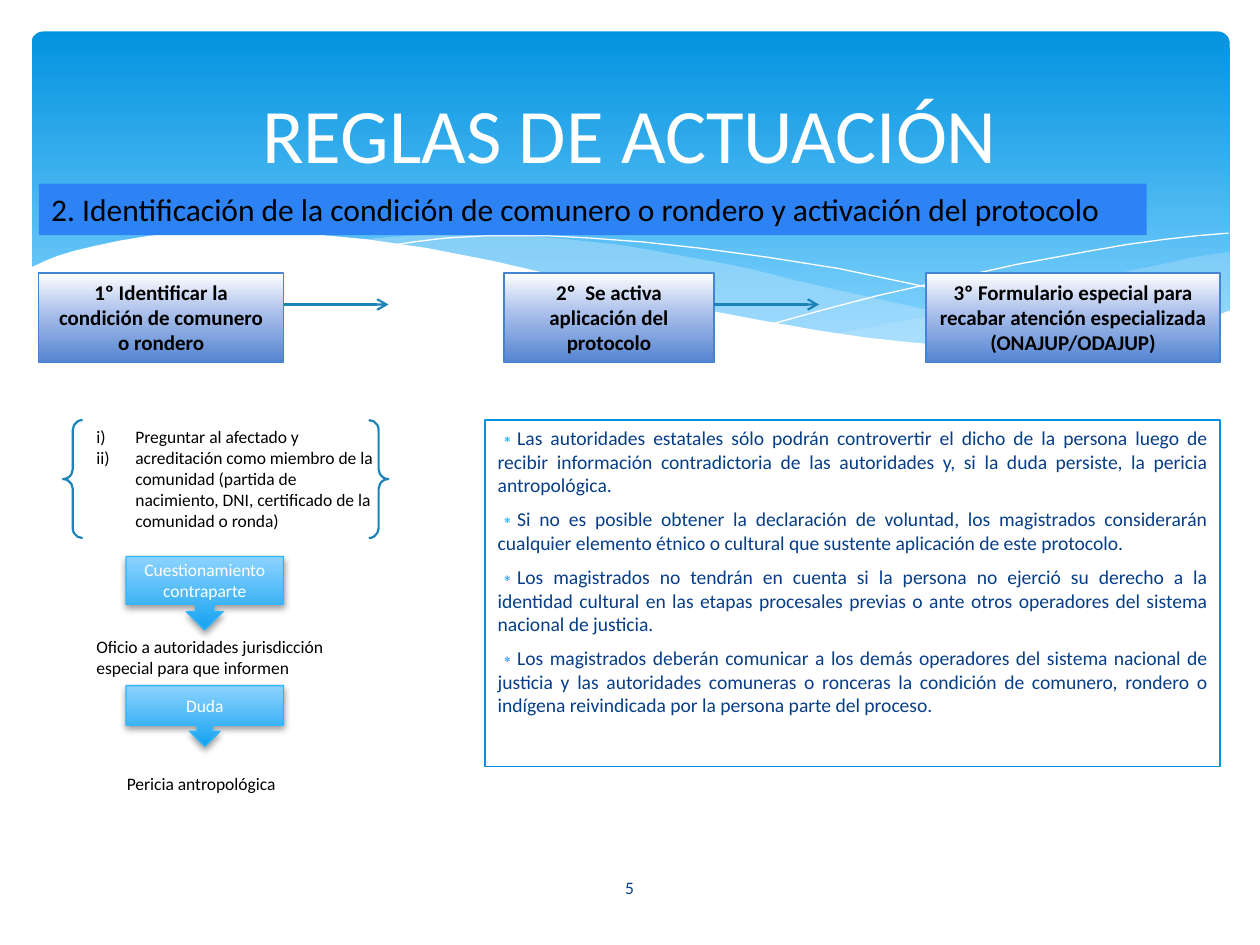
"""Build the slide on rules of action: three steps, a chain of doubts and the notes beside it."""
from lxml import etree
from pptx import Presentation
from pptx import util as u
from pptx.dml.color import RGBColor
from pptx.enum import shapes, text
from pptx.oxml import ns

CELL = u.Inches(1) // 12
FONT = "Calibri"
KIND = shapes.MSO_SHAPE
LEFT, CENTER, JUSTIFY = text.PP_ALIGN.LEFT, text.PP_ALIGN.CENTER, text.PP_ALIGN.JUSTIFY
TOP, MIDDLE = text.MSO_ANCHOR.TOP, text.MSO_ANCHOR.MIDDLE
NAVY, EDGE = "073E87", "1C83B9"


def paint(shape, stops=(), line=None, width=0.75, alpha=None):
    """Fill with (position, colour) stops, top to bottom, and outline a shape."""
    shape.shadow.inherit = False
    if len(stops) > 1:
        shape.fill.gradient()
        shape.fill.gradient_angle = 270
        ramp = shape._element.spPr.find(".//" + ns.qn("a:gsLst"))
        for stop in list(ramp):
            ramp.remove(stop)
        for position, color in stops:
            stop = etree.SubElement(ramp, ns.qn("a:gs"), pos=str(position * 1000))
            etree.SubElement(stop, ns.qn("a:srgbClr"), val=color)
    elif stops:
        shape.fill.solid()
        shape.fill.fore_color.rgb = RGBColor.from_string(stops[0][1])
        if alpha:
            tint = shape._element.spPr.find(".//" + ns.qn("a:srgbClr"))
            etree.SubElement(tint, ns.qn("a:alpha"), val=str(alpha * 1000))
    else:
        shape.fill.background()
    if line:
        shape.line.color.rgb = RGBColor.from_string(line)
        shape.line.width = u.Pt(width)
    else:
        shape.line.fill.background()


def write(shape, lines, size, color="000000", align=LEFT, anchor=TOP, bold=False, after=0):
    """Write one paragraph per line and return the paragraphs."""
    frame = shape.text_frame
    frame.text = "\n".join(lines)
    settings = {"word_wrap": True, "auto_size": text.MSO_AUTO_SIZE.NONE, "vertical_anchor": anchor}
    for name, value in settings.items():
        setattr(frame, name, value)
    layout = {"alignment": align, "space_before": u.Pt(0), "space_after": u.Pt(after)}
    style = {"name": FONT, "size": u.Pt(size), "bold": bold}
    for para in frame.paragraphs:
        for name, value in layout.items():
            setattr(para, name, value)
        for span in para.runs:
            span.font.color.rgb = RGBColor.from_string(color)
            for name, value in style.items():
                setattr(span.font, name, value)
    return frame.paragraphs


deck = Presentation()
deck.slide_width, deck.slide_height = 120 * CELL, 90 * CELL
page = deck.slides.add_slide(deck.slide_layouts[1])
board = page.shapes

sky = board.add_shape(KIND.ROUNDED_RECTANGLE, *[u.Emu(n * CELL) for n in (3, 3, 114.1, 32.4)])
sky.adjustments[0] = 0.034
paint(sky, [(0, "0293E0"), (90, "83D3FE")])

# Points are in hundredths of an inch.
right_wave = [(975, 200), (948, 204), (921, 210), (891, 216), (861, 223), (805, 237), (753, 248),
              (706, 257), (661, 265), (691, 269), (719, 272), (745, 275), (769, 277), (803, 278),
              (835, 277), (863, 275), (889, 272), (913, 267), (935, 262), (949, 257), (963, 252),
              (976, 247), (976, 200)]
middle_wave = [(893, 273), (866, 269), (807, 260), (741, 247), (668, 231), (629, 222), (598, 214),
               (569, 208), (541, 203), (514, 198), (489, 194), (442, 189), (399, 186), (361, 185),
               (328, 187), (299, 189), (286, 191), (323, 196), (362, 203), (404, 211), (449, 222),
               (530, 240), (584, 252), (634, 261), (680, 268), (722, 274), (761, 277), (796, 278),
               (838, 278), (867, 276)]
falling_curve = [(309, 195), (328, 192), (353, 189), (387, 187), (433, 187), (469, 189), (510, 192),
                 (556, 197), (608, 204), (665, 213), (727, 226), (795, 241), (869, 261), (907, 272)]
rising_curve = [(613, 257), (653, 246), (695, 235), (748, 223), (806, 210), (866, 199), (895, 194),
                (924, 190), (951, 187), (975, 185)]
white_wave = [(977, 246), (959, 253), (940, 259), (920, 265), (899, 269), (875, 273), (850, 275),
              (823, 277), (793, 276), (761, 275), (726, 272), (688, 268), (648, 262), (603, 254),
              (555, 245), (503, 233), (447, 220), (391, 207), (340, 197), (292, 190), (250, 186),
              (211, 184), (177, 184), (146, 185), (119, 187), (95, 191), (76, 195), (59, 199),
              (46, 203), (36, 207), (23, 213), (23, 329), (977, 329)]
for points, fill, alpha in ((right_wave, "C6E7FC", 29), (middle_wave, "C6E7FC", 40),
                            (falling_curve, None, None), (rising_curve, None, None),
                            (white_wave, "FFFFFF", None)):
    outline = board.build_freeform(*points[0], scale=u.Inches(0.01))
    outline.add_line_segments(points[1:], close=bool(fill))
    wave = outline.convert_to_shape()
    paint(wave, [(0, fill)] if fill else (), None if fill else "FFFFFF", 0, alpha)

title, body = page.placeholders
for holder, box in ((body, (46.2, 40, 70, 33)), (title, (6, 4.4, 108, 16.4))):
    holder.left, holder.top, holder.width, holder.height = [u.Emu(n * CELL) for n in box]
    board._spTree.append(holder._element)
write(title, ["REGLAS DE ACTUACIÓN"], 44, "FFFFFF", CENTER, MIDDLE)
body.line.color.rgb = RGBColor.from_string("0293E0")
body.line.width = u.Pt(0.75)
rules = [
    "Las autoridades estatales sólo podrán controvertir el dicho de la persona luego de recibir "
    "información contradictoria de las autoridades y, si la duda persiste, la pericia antropológica.",
    "Si no es posible obtener la declaración de voluntad, los magistrados considerarán cualquier "
    "elemento étnico o cultural que sustente aplicación de este protocolo.",
    "Los magistrados no tendrán en cuenta si la persona no ejerció su derecho a la identidad cultural "
    "en las etapas procesales previas o ante otros operadores del sistema nacional de justicia.",
    "Los magistrados deberán comunicar a los demás operadores del sistema nacional de justicia y las "
    "autoridades comuneras o ronceras la condición de comunero, rondero o indígena reivindicada por la "
    "persona parte del proceso.",
]
for para in write(body, rules, 11.2, NAVY, JUSTIFY, after=6):
    props = para._p.get_or_add_pPr()
    props.set("marL", "0")
    props.set("indent", str(-u.Inches(0.3)))
    tint = etree.SubElement(props, ns.qn("a:buClr"))
    etree.SubElement(tint, ns.qn("a:srgbClr"), val="31B6FD")
    etree.SubElement(props, ns.qn("a:buChar"), char="∗")

banner = board.add_shape(KIND.RECTANGLE, *[u.Emu(n * CELL) for n in (3.7, 17.5, 105.5, 4.9)])
paint(banner, [(0, "2D83F4")])
write(banner, ["2. Identificación de la condición de comunero o rondero y activación del protocolo"], 18)

for left, width, label in (
        (3.7, 23.3, "1º Identificar la condición de comunero o rondero"),
        (48, 20, "2º  Se activa aplicación del protocolo"),
        (88.2, 28, "3º Formulario especial para recabar atención especializada (ONAJUP/ODAJUP)")):
    step = board.add_shape(KIND.RECTANGLE, *[u.Emu(n * CELL) for n in (left, 26, width, 8.5)])
    paint(step, [(0, "FFFFFF"), (44, "ABC0EB"), (100, "5484D1")], "4584D3")
    write(step, [label], 12, align=CENTER, bold=True)

for start in (27, 68):
    arrow = board.add_connector(shapes.MSO_CONNECTOR.STRAIGHT,
                                *[n * CELL for n in (start, 29, start + 10, 29)])
    arrow.line.color.rgb = RGBColor.from_string(EDGE)
    arrow.line.width = u.Pt(1.25)
    etree.SubElement(arrow.line._get_or_add_ln(), ns.qn("a:tailEnd"), type="arrow")
    etree.SubElement(arrow._element.spPr, ns.qn("a:effectLst"))

braces = board.add_shape(KIND.DOUBLE_BRACE, *[u.Emu(n * CELL) for n in (6, 40, 31, 11.25)])
paint(braces, line=EDGE, width=1.25)

for top, height, share, label in ((53, 7, 0.65, "Cuestionamiento contraparte"),
                                  (65.3, 5.8, 0.65, "Duda")):
    callout = board.add_shape(KIND.DOWN_ARROW_CALLOUT, *[u.Emu(n * CELL) for n in (12, top, 15, height)])
    callout.adjustments[3] = share
    paint(callout, [(0, "8CD3FF"), (100, "14A2EF")], "31B6FD")
    effects = callout._element.spPr.find(ns.qn("a:effectLst"))
    shade = etree.SubElement(effects, ns.qn("a:outerShdw"), blurRad=str(u.Pt(4)), dist=str(u.Pt(2)),
                             dir="5400000", rotWithShape="0")
    tint = etree.SubElement(shade, ns.qn("a:srgbClr"), val="000000")
    etree.SubElement(tint, ns.qn("a:alpha"), val="38000")
    write(callout, [label], 10, "FFFFFF", CENTER, MIDDLE)

checks = ["Preguntar al afectado y",
          "acreditación como miembro de la comunidad (partida de nacimiento, DNI, certificado de la "
          "comunidad o ronda)"]
for box, lines, color, align, anchor in (
        ((8, 40, 29, 11.25), checks, "000000", LEFT, TOP),
        ((8, 60, 26, 5.3), ["Oficio a autoridades jurisdicción especial para que informen"],
         "000000", LEFT, TOP),
        ((10.9, 73, 20.2, 3.2), ["Pericia antropológica"], "000000", LEFT, TOP),
        ((52.3, 82.1, 15.3, 4.8), ["5"], NAVY, CENTER, MIDDLE)):
    note = board.add_textbox(*[u.Emu(n * CELL) for n in box])
    for para in write(note, lines, 10, color, align, anchor):
        if lines is checks:
            props = para._p.get_or_add_pPr()
            props.set("marL", str(u.Inches(0.31)))
            props.set("indent", str(-u.Inches(0.31)))
            etree.SubElement(props, ns.qn("a:buAutoNum"), type="romanLcParenR")

deck.save("out.pptx")
